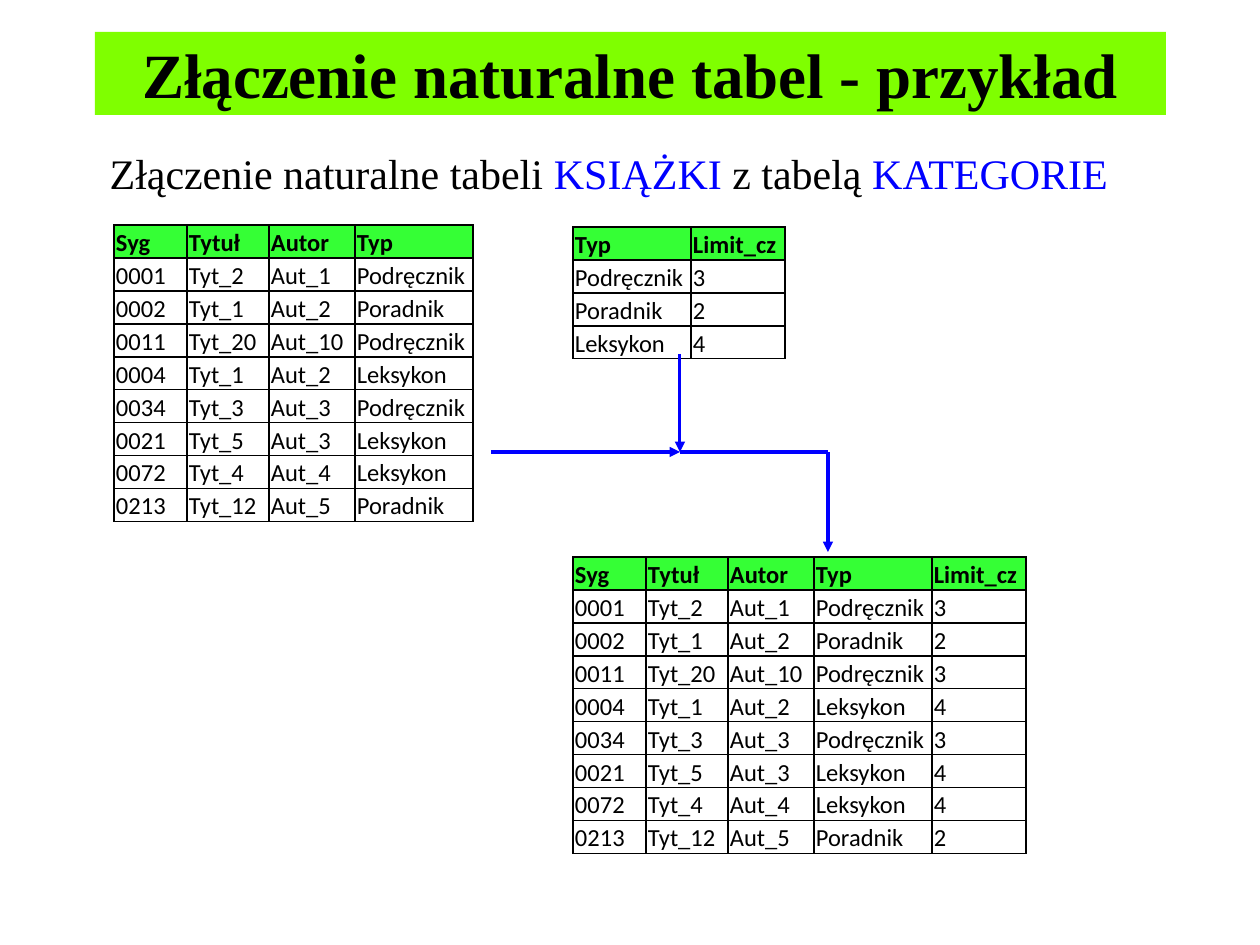
from lxml.etree import SubElement as Sub
from pptx import Presentation
from pptx.dml.color import RGBColor
from pptx.enum.shapes import MSO_CONNECTOR as Link
from pptx.enum.text import MSO_ANCHOR as Anchor, MSO_AUTO_SIZE as Fit, PP_ALIGN as Align
from pptx.oxml import parse_xml
from pptx.oxml.ns import nsdecls, qn
from pptx.util import Pt

PX = 7257


def color(code):
    return RGBColor.from_string(code)


def style(run, face, size, code, bold=False):
    font = run.font
    font.name, font.size, font.bold = face, Pt(size), bold
    font.color.rgb = color(code)


deck = Presentation()
deck.slide_width, deck.slide_height = 1260 * PX, 945 * PX
slide = deck.slides.add_slide(deck.slide_layouts[1])
title, body = slide.placeholders

title.left, title.top, title.width, title.height = [n * PX for n in (95, 32, 1071, 83)]
title.fill.solid()
title.fill.fore_color.rgb = color("7FFF00")
frame = title.text_frame
frame.text = "Złączenie naturalne tabel - przykład"
frame.auto_size = Fit.NONE
frame.vertical_anchor = Anchor.MIDDLE
frame.paragraphs[0].alignment = Align.CENTER
style(frame.paragraphs[0].runs[0], "Times New Roman", 36, "000000", True)

body.left, body.top, body.width, body.height = [n * PX for n in (49, 141, 1162, 73)]
frame = body.text_frame
frame.auto_size = Fit.NONE
line = frame.paragraphs[0]
line.space_before = Pt(5)
props = line._p.get_or_add_pPr()
props.set("marL", str(48 * PX))
props.set("indent", "0")
Sub(props, qn("a:buNone"))
parts = [("Złączenie naturalne tabeli ", "000000"), ("KSIĄŻKI", "0000FF"),
         (" z tabelą ", "000000"), ("KATEGORIE", "0000FF")]
for text, code in parts:
    run = line.add_run()
    run.text = text
    style(run, "Times New Roman", 24, code)

books = [row.split() for row in (
    "Syg Tytuł Autor Typ",
    "0001 Tyt_2 Aut_1 Podręcznik",
    "0002 Tyt_1 Aut_2 Poradnik",
    "0011 Tyt_20 Aut_10 Podręcznik",
    "0004 Tyt_1 Aut_2 Leksykon",
    "0034 Tyt_3 Aut_3 Podręcznik",
    "0021 Tyt_5 Aut_3 Leksykon",
    "0072 Tyt_4 Aut_4 Leksykon",
    "0213 Tyt_12 Aut_5 Poradnik")]
kinds = [["Typ", "Limit_cz"], ["Podręcznik", "3"], ["Poradnik", "2"], ["Leksykon", "4"]]
limits = dict(kinds)
joined = [row + [limits[row[-1]]] for row in books]
widths = {"Syg": 73, "Tytuł": 82, "Autor": 86, "Typ": 118, "Limit_cz": 94}

for left, top, rows in [(573, 557, joined), (114, 225, books), (573, 227, kinds)]:
    spans = [widths[name] for name in rows[0]]
    box = (left, top, sum(spans), 32 * len(rows))
    table = slide.shapes.add_table(len(rows), len(spans), *[n * PX for n in box]).table
    table.first_row = table.horz_banding = False
    for col, span in zip(table.columns, spans):
        col.width = span * PX
    for r, row in enumerate(rows):
        for c, text in enumerate(row):
            cell = table.cell(r, c)
            cell.margin_left = cell.margin_right = 2 * PX
            cell.margin_top, cell.margin_bottom = PX, 0
            cell.fill.background()
            if r == 0:
                cell.fill.solid()
                cell.fill.fore_color.rgb = color("35FF35")
                cell.vertical_anchor = Anchor.MIDDLE
            cell.text = text
            para = cell.text_frame.paragraphs[0]
            para.line_spacing, para.space_after = 1.07, Pt(8)
            style(para.runs[0], "Calibri", 14, "000000", r == 0)
            for i, side in enumerate("LRTB"):
                cell._tc.get_or_add_tcPr().insert(i, parse_xml(
                    f'<a:ln{side} {nsdecls("a")} w="12700"><a:solidFill>'
                    f'<a:srgbClr val="000000"/></a:solidFill></a:ln{side}>'))

group = slide.shapes.add_group_shape()
arrows = [(828, 452, 828, 552, True), (491, 452, 680, 452, True),
          (680, 354, 680, 452, True), (680, 452, 828, 452, False)]
for *ends, head in arrows:
    wire = group.shapes.add_connector(Link.STRAIGHT, *[n * PX for n in ends])
    wire.line.color.rgb = color("0000FF")
    wire.line.width = Pt(1.75)
    if head:
        Sub(wire.line._get_or_add_ln(), qn("a:tailEnd"), type="triangle")
    Sub(wire._element.spPr, qn("a:effectLst"))

deck.save("out.pptx")
